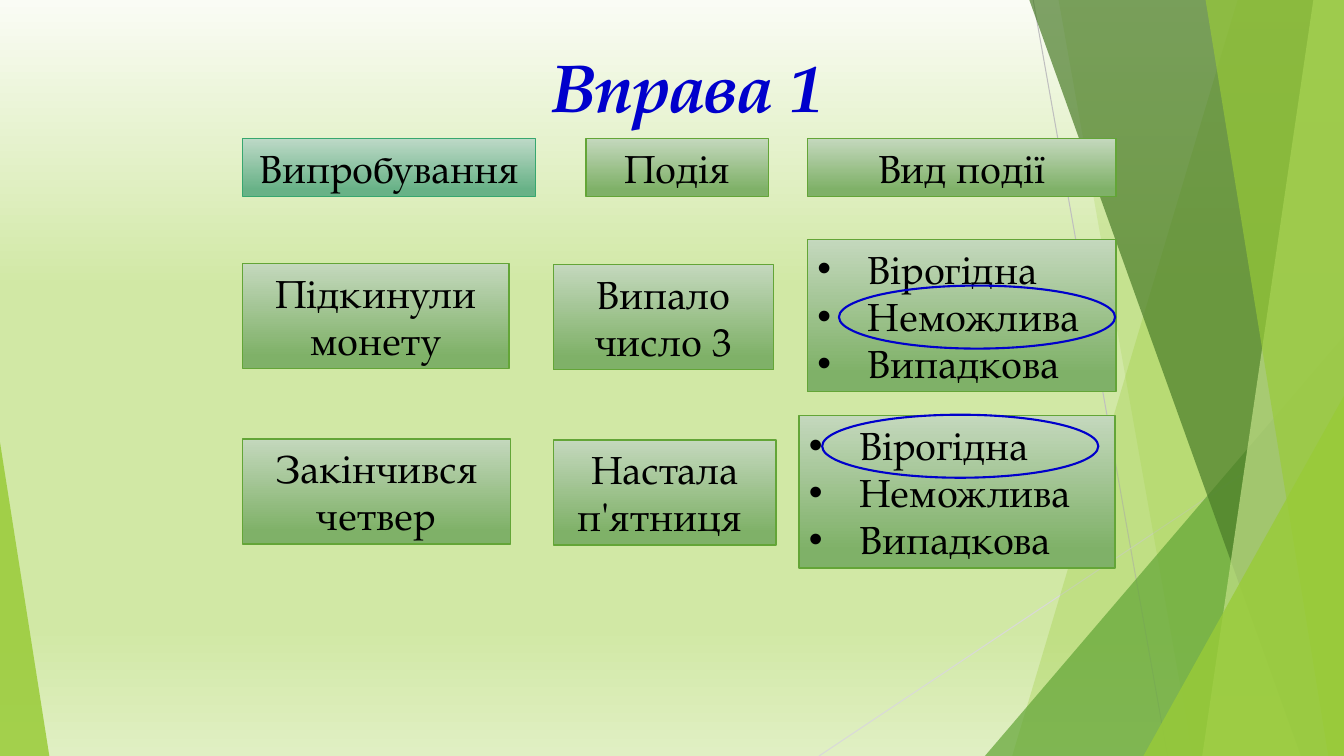
from copy import deepcopy

from lxml.etree import SubElement as Sub
from pptx import Presentation
from pptx.dml.color import RGBColor as RGB
from pptx.enum.shapes import MSO_CONNECTOR as Link, MSO_SHAPE as Kind
from pptx.enum.text import MSO_ANCHOR as Anchor, MSO_AUTO_SIZE as Fit, PP_ALIGN as Align
from pptx.oxml.ns import qn
from pptx.util import Pt

PX = 9525  # EMU in one px, 96 px to the inch
FONT = "TeX Gyre Pagella"
HUES = {
    "lime": "99CB38", "green": "63A537", "dark": "4A7C29", "pale": "C2E088",
    "teal": "37A76F", "blue": "0000CC", "black": "000000",
    "gray": "BFBFBF", "mist": "D9D9D9",
}
FADES = {
    "back": [(0, "FAFCF5"), (38, "D1E8A5"), (83, "D1E8A5"), (100, "E0EFC3")],
    "green": [(0, "C4D8BD"), (88, "7FB168")],
    "teal": [(0, "BDD9C7"), (88, "68B287")],
}


def hue(name):
    return RGB.from_string(HUES[name])


def fade(fill, root, name):
    """Fill from top to bottom with the stops of a named gradient."""
    fill.gradient()
    fill.gradient_angle = 270
    stops = root.find(".//" + qn("a:gsLst"))
    while len(stops) < len(FADES[name]):
        stops.append(deepcopy(stops[-1]))
    for stop, (at, tone) in zip(fill.gradient_stops, FADES[name]):
        stop.position = at / 100
        stop.color.rgb = RGB.from_string(tone)


deck = Presentation()
deck.slide_width, deck.slide_height = 1280 * PX, 720 * PX
slide = deck.slides.add_slide(deck.slide_layouts[5])
shapes = slide.shapes
fade(slide.background.fill, slide.element, "back")

# Thin lines behind the facets
for tone, *ends in [("gray", 984, 0, 1112, 720), ("mist", 1280, 387, 780, 720)]:
    line = shapes.add_connector(Link.STRAIGHT, *[n * PX for n in ends])
    line.line.color.rgb = hue(tone)
    line.line.width = Pt(0.75)
    Sub(line.element.spPr, qn("a:effectLst"))

# Facets: a band has its left edge at top and foot, a triangle its box and apex
facets = [
    ("lime", 30, (1179, 964)),
    ("lime", 20, (1008, 1136)),
    ("green", 72, (938, 320, 342, 400, 1)),
    ("dark", 70, (980, 1239)),
    ("pale", 70, (1251, 1145)),
    ("lime", 65, (1148, 1265)),
    ("lime", 80, (1089, 377, 191, 343, 1)),
    ("lime", 85, (0, 421, 47, 299, 0)),
]
for tone, alpha, form in facets:
    if len(form) == 2:
        top, foot = form
        pen = shapes.build_freeform(top, -1, scale=PX)
        pen.add_line_segments([(1280, -1), (1280, 720), (foot, 720)])
        facet = pen.convert_to_shape()
    else:
        *box, apex = form
        facet = shapes.add_shape(Kind.ISOSCELES_TRIANGLE, *[n * PX for n in box])
        facet.adjustments[0] = apex
    facet.shadow.inherit = False
    facet.line.fill.background()
    facet.fill.solid()
    facet.fill.fore_color.rgb = hue(tone)
    color = facet.element.spPr.find(".//" + qn("a:srgbClr"))
    Sub(color, qn("a:alpha"), val=str(alpha * 1000))

# Headings, trials, events and kinds of event
kinds = ["Вірогідна", "Неможлива", "Випадкова"]
cards = [
    ("teal", (231, 132, 279, 55), ["Випробування"]),
    ("green", (558, 132, 174, 55), ["Подія"]),
    ("green", (769, 132, 294, 55), ["Вид події"]),
    ("green", (231, 251, 254, 100), ["Підкинули монету"]),
    ("green", (527, 252, 210, 100), ["Випало число 3"]),
    ("green", (769, 228, 294, 145), kinds),
    ("green", (231, 418, 255, 100), ["Закінчився четвер"]),
    ("green", (527, 419, 212, 100), ["Настала п'ятниця "]),
    ("green", (761, 396, 301, 145), kinds),
]
for tone, box, lines in cards:
    card = shapes.add_shape(Kind.RECTANGLE, *[n * PX for n in box])
    card.shadow.inherit = False
    fade(card.fill, card.element, tone)
    card.line.color.rgb = hue(tone)
    card.line.width = Pt(1)
    frame = card.text_frame
    frame.word_wrap = True
    frame.auto_size = Fit.SHAPE_TO_FIT_TEXT
    frame.text = "\n".join(lines)
    for para in frame.paragraphs:
        para.alignment = Align.CENTER
        para.font.name = FONT
        para.font.size = Pt(28)
        para.font.color.rgb = hue("black")
        if lines is kinds:
            para.alignment = Align.LEFT
            props = para._p.get_or_add_pPr()
            props.set("marL", str(48 * PX))
            props.set("indent", str(-48 * PX))
            mark = Sub(props, qn("a:buFont"), typeface="Arial")
            bullet = Sub(props, qn("a:buChar"), char="•")
            # Bullets come before the run defaults
            props.insert(0, mark)
            props.insert(1, bullet)

# Title
title = shapes.title
title.left, title.top, title.width, title.height = [n * PX for n in (504, 38, 301, 87)]
frame = title.text_frame
frame.text = "Вправа 1"
frame.word_wrap = True
frame.auto_size = Fit.SHAPE_TO_FIT_TEXT
frame.vertical_anchor = Anchor.TOP
para = frame.paragraphs[0]
para.alignment = Align.CENTER
para.font.name = FONT
para.font.size = Pt(48)
para.font.bold = para.font.italic = True
para.font.color.rgb = hue("blue")

# Rings around the right answers
for left, top in [(799, 272), (783, 395)]:
    ring = shapes.add_shape(Kind.OVAL, left * PX, top * PX, 263 * PX, 60 * PX)
    ring.shadow.inherit = False
    ring.fill.background()
    ring.line.color.rgb = hue("blue")
    ring.line.width = Pt(1.5)

deck.save("out.pptx")
